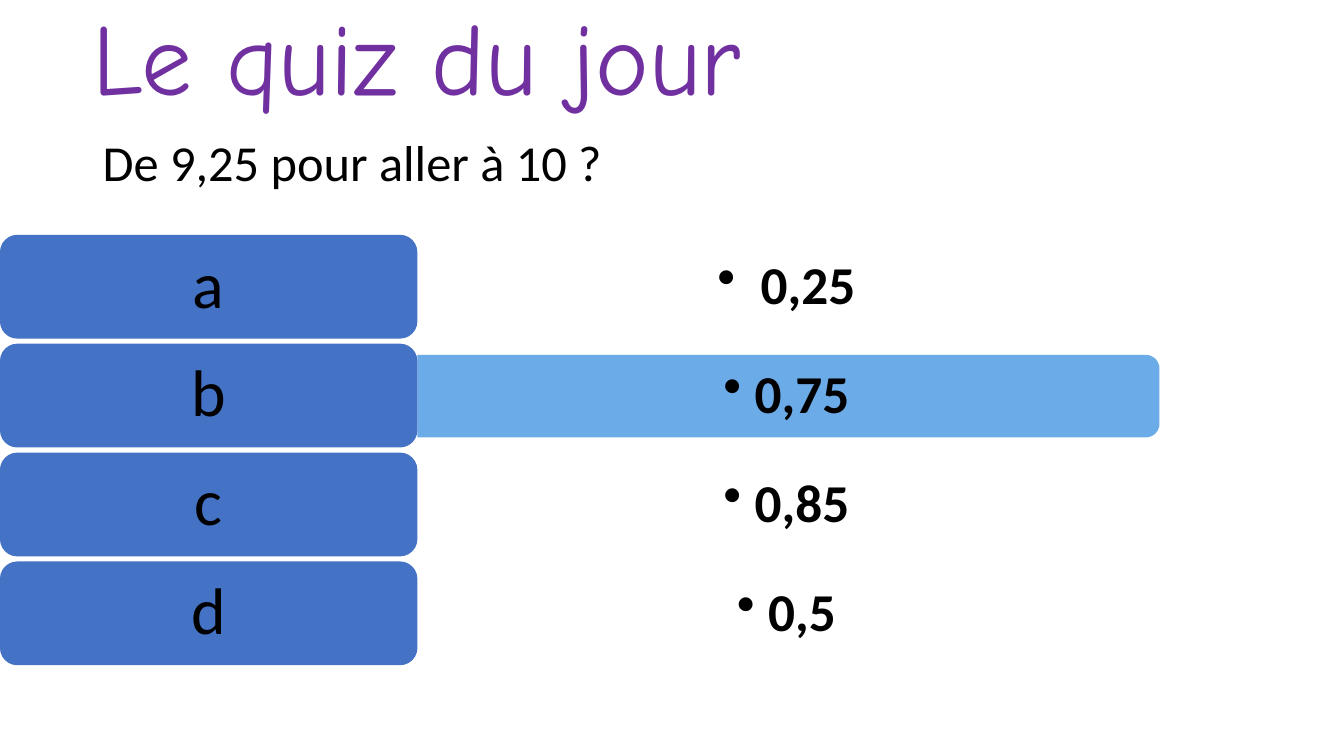
from lxml.etree import SubElement
from pptx import Presentation
from pptx.dml.color import RGBColor
from pptx.enum.shapes import MSO_SHAPE
from pptx.enum.text import MSO_ANCHOR, MSO_AUTO_SIZE, PP_ALIGN
from pptx.oxml.ns import qn
from pptx.util import Inches, Pt

PURPLE = RGBColor(0x70, 0x30, 0xA0)
BLUE = RGBColor(0x44, 0x72, 0xC4)
LIGHT_BLUE = RGBColor(0x5C, 0xA2, 0xE6)
WHITE = RGBColor(0xFF, 0xFF, 0xFF)
BLACK = RGBColor(0x00, 0x00, 0x00)


def set_text(tf, text, size, color=BLACK, font="Calibri", margins=(0, 0),
             align=PP_ALIGN.LEFT, spacing=0.9):
    tf.word_wrap = True
    tf.auto_size = MSO_AUTO_SIZE.NONE
    tf.vertical_anchor = MSO_ANCHOR.MIDDLE
    tf.margin_left = tf.margin_right = Inches(margins[0])
    tf.margin_top = tf.margin_bottom = Inches(margins[1])
    p = tf.paragraphs[0]
    p.text = text
    p.alignment = align
    p.line_spacing = spacing
    p.font.name = font
    p.font.size = Pt(size)
    p.font.color.rgb = color
    return p


def add_block(shape_type, left, top, width, height, color):
    sp = s.shapes.add_shape(shape_type, Inches(left), Inches(top),
                            Inches(width), Inches(height))
    sp.shadow.inherit = False
    sp.fill.solid()
    sp.fill.fore_color.rgb = color
    sp.line.fill.background()
    return sp


prs = Presentation()
prs.slide_width = Inches(13.33)
prs.slide_height = Inches(7.5)
s = prs.slides.add_slide(prs.slide_layouts[5])

title = s.shapes.title
title.left, title.top = Inches(0.92), Inches(0.05)
title.width, title.height = Inches(11.5), Inches(1.15)
set_text(title.text_frame, "Le quiz du jour", 72.5, PURPLE, "Comic Neue")

question = s.shapes.add_textbox(Inches(0.92), Inches(1.25), Inches(6.72), Inches(0.71))
set_text(question.text_frame, "De 9,25 pour aller à 10 ?", 36, margins=(0.1, 0.05), spacing=1.0)

choices = [
    ("a", " 0,25", WHITE),
    ("b", "0,75", LIGHT_BLUE),
    ("c", "0,85", WHITE),
    ("d", "0,5", WHITE),
]
for i, (letter, answer, color) in enumerate(choices):
    top = 2.33 + 1.08 * i
    middle = top + 0.52

    bar = add_block(MSO_SHAPE.ROUND_2_SAME_RECTANGLE, 7.41, middle - 3.68, 0.82, 7.36, color)
    bar.rotation = 90
    rgb = bar.fill._xPr.find(qn("a:solidFill")).find(qn("a:srgbClr"))
    SubElement(rgb, qn("a:alpha"), val="90000")

    box = s.shapes.add_textbox(Inches(4.14), Inches(middle - 0.37), Inches(7.32), Inches(0.74))
    p = set_text(box.text_frame, answer, 38, margins=(0.16, 0.08), align=PP_ALIGN.CENTER)
    p.font.bold = True
    p.level = 1
    pPr = p._p.get_or_add_pPr()
    pPr.set("marL", str(Inches(0.31)))
    pPr.set("indent", str(Inches(-0.31)))
    bullet = pPr.makeelement(qn("a:buChar"), {"char": "•"})
    pPr.find(qn("a:defRPr")).addprevious(bullet)

    label = add_block(MSO_SHAPE.ROUNDED_RECTANGLE, 0, top, 4.14, 1.03, BLUE)
    set_text(label.text_frame, letter, 47, margins=(0.25, 0.15), align=PP_ALIGN.CENTER)

prs.save("out.pptx")
